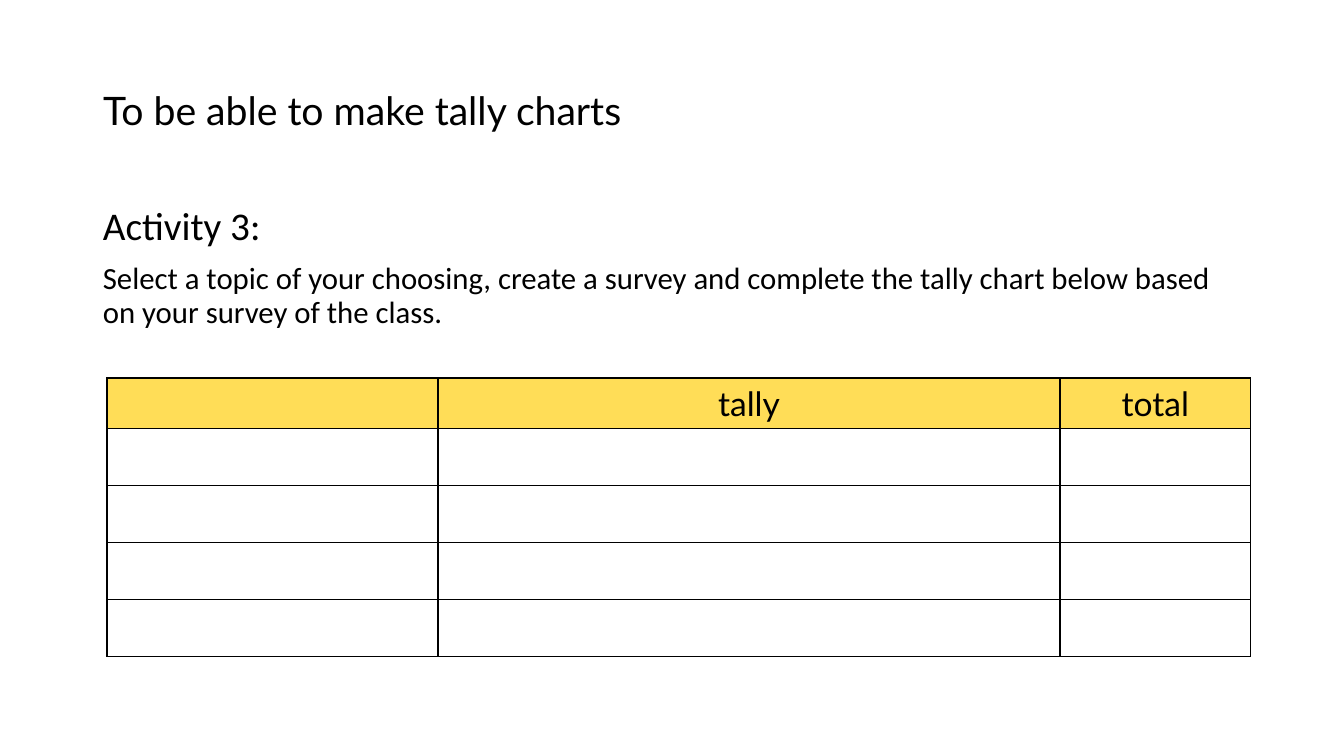
from lxml.etree import SubElement
from pptx import Presentation
from pptx.dml.color import RGBColor
from pptx.enum.text import MSO_ANCHOR as ANCHOR, PP_ALIGN as ALIGN
from pptx.oxml.ns import qn
from pptx.util import Pt

PX = 914400 / 100.8
BLACK, WHITE, YELLOW = "000000", "FFFFFF", "FFDD57"


def px(n):
    return round(n * PX)


def rgb(value):
    return RGBColor.from_string(value)


class Deck:
    """Holds the fonts and the current slide."""
    head_font, body_font = "Lato", "Calibri"

    def __init__(self):
        self.prs = Presentation()
        self.prs.slide_width, self.prs.slide_height = px(1344), px(756)
        self.slide = self.prs.slides.add_slide(self.prs.slide_layouts[5])

    def style(self, p, size, font, align=ALIGN.LEFT):
        p.alignment = align
        for r in p.runs:
            r.font.size, r.font.name = Pt(size), font
            r.font.color.rgb = rgb(BLACK)

    def title(self, text, x, y, w, h):
        s = self.slide.shapes.title
        s.left, s.top, s.width, s.height = map(px, (x, y, w, h))
        tf = s.text_frame
        tf.text, tf.vertical_anchor = text, ANCHOR.MIDDLE
        tf.paragraphs[0].line_spacing = 0.9
        self.style(tf.paragraphs[0], 28, self.head_font)

    def text(self, lines, x, y, w, h):
        """Adds one paragraph for each (text, size) pair."""
        tf = self.slide.shapes.add_textbox(*map(px, (x, y, w, h))).text_frame
        tf.word_wrap = True
        for i, (text, size) in enumerate(lines):
            p = tf.add_paragraph() if i else tf.paragraphs[0]
            p.text, p.line_spacing = text, 0.9
            p.space_before = Pt(10 if i else 0)
            self.style(p, size, self.body_font)

    def border(self, cell):
        pr = cell._tc.get_or_add_tcPr()
        for i, side in enumerate(("lnL", "lnR", "lnT", "lnB")):
            ln = pr.makeelement(qn("a:" + side), {"w": str(Pt(1))})
            fill = SubElement(ln, qn("a:solidFill"))
            SubElement(fill, qn("a:srgbClr"), val=BLACK)
            pr.insert(i, ln)

    def table(self, header, blank_rows, x, y, widths, head_h, row_h):
        height = head_h + blank_rows * row_h
        frame = self.slide.shapes.add_table(
            blank_rows + 1, len(header), *map(px, (x, y, sum(widths), height)))
        table = frame.table
        for col, w in zip(table.columns, widths):
            col.width = px(w)
        for i, row in enumerate(table.rows):
            row.height = px(row_h if i else head_h)
            for cell in row.cells:
                cell.fill.solid()
                cell.fill.fore_color.rgb = rgb(WHITE if i else YELLOW)
                cell.vertical_anchor = ANCHOR.MIDDLE
                self.border(cell)
        for cell, text in zip(table.rows[0].cells, header):
            if text:
                cell.text_frame.text = text
                p = cell.text_frame.paragraphs[0]
                self.style(p, 24, self.head_font, ALIGN.CENTER)
                p.runs[0].font.bold = False


def main():
    deck = Deck()
    deck.title("To be able to make tally charts", 93, 40, 968, 146)
    deck.text([
        ("Activity 3:", 28),
        ("Select a topic of your choosing, create a survey and complete the "
         "tally chart below based on your survey of the class.", 22),
    ], 93, 202, 1159, 150)
    deck.table(["", "tally", "total"], 4, 107, 378, [331, 622, 191], 50, 57)
    deck.prs.save("out.pptx")


if __name__ == "__main__":
    main()
